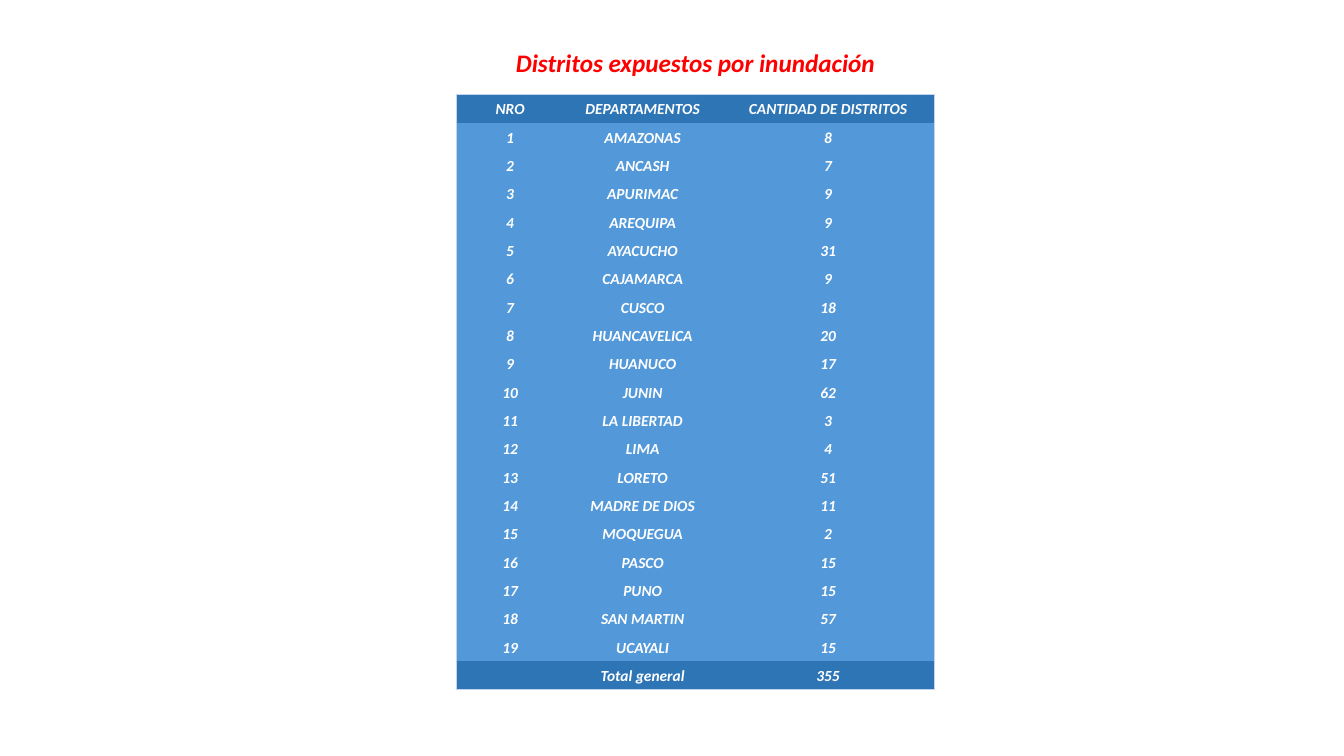
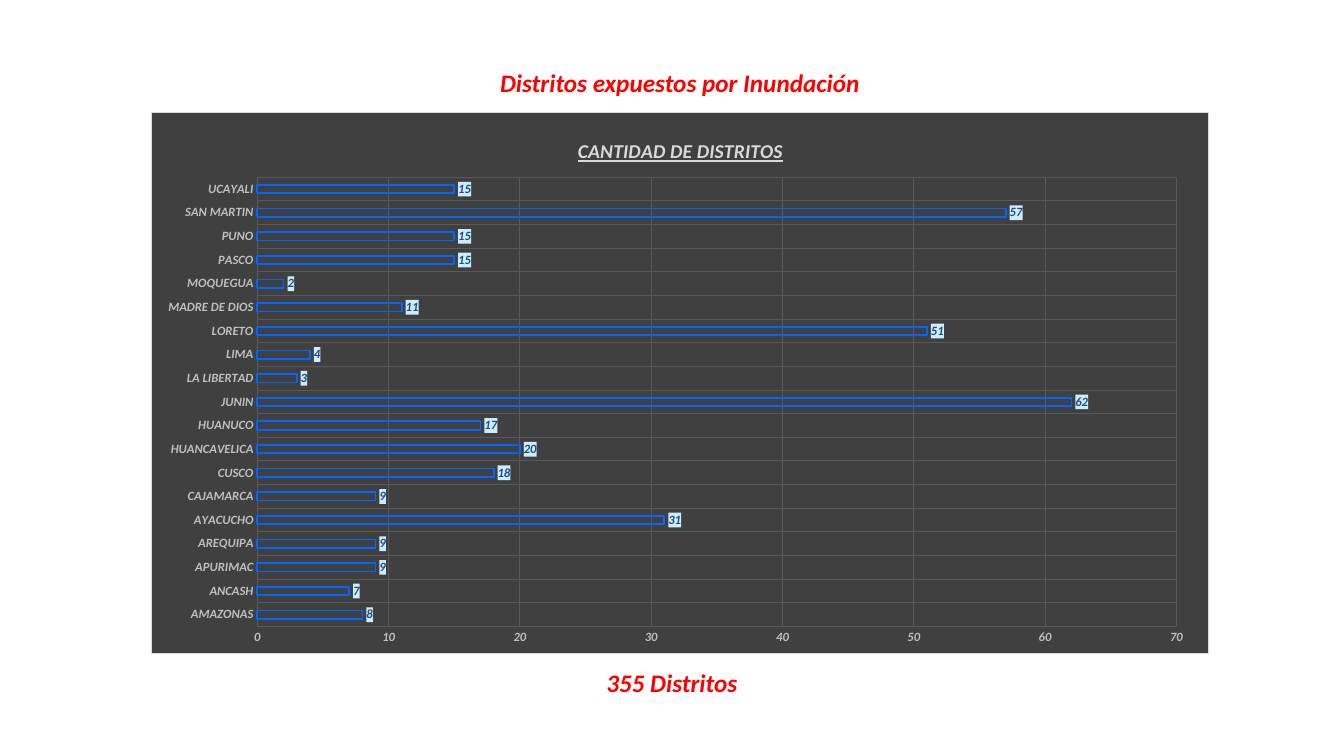
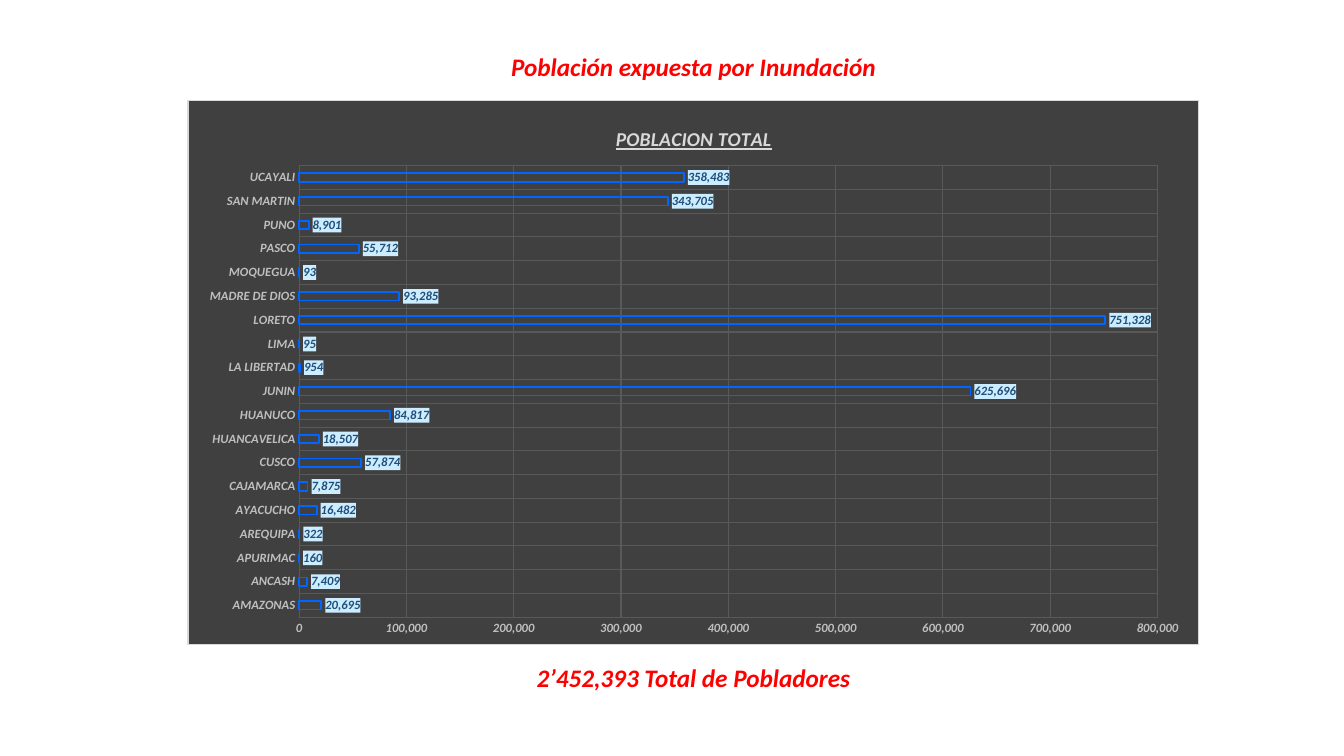
from pptx import Presentation, util as u
from pptx.chart.data import CategoryChartData
from pptx.dml.color import RGBColor
from pptx.enum import chart as charts, text
from pptx.oxml import parse_xml
from pptx.oxml.ns import nsdecls, qn

COLORS = {
    "heading": "FF0000", "white": "FFFFFF", "band": "2E75B6", "body": "5399DA",
    "edge": "C4D5EB", "panel": "404040", "panel_edge": "D9D9D9", "grid": "595959",
    "axis": "BFBFBF", "bar": "0066FF", "label": "1F4E79", "label_fill": "CCECFF",
}
FONT = {"name": "Calibri", "bold": True, "italic": True}
NO_STYLE = "{2D5ABB26-0587-4C30-8999-92F81FD0307C}"

deck = Presentation()
deck.slide_width, deck.slide_height = u.Inches(13.33), u.Inches(7.5)


def place(left, top, width, height):
    """Turn percent shares of the slide into lengths."""
    across, down = deck.slide_width / 100, deck.slide_height / 100
    return [int(left * across), int(top * down), int(width * across), int(height * down)]


def style(font, color, size, **extra):
    for name, value in {**FONT, "size": u.Pt(size), **extra}.items():
        setattr(font, name, value)
    font.color.rgb = RGBColor.from_string(COLORS[color])


# Data
departments = [
    "AMAZONAS", "ANCASH", "APURIMAC", "AREQUIPA", "AYACUCHO", "CAJAMARCA", "CUSCO",
    "HUANCAVELICA", "HUANUCO", "JUNIN", "LA LIBERTAD", "LIMA", "LORETO",
    "MADRE DE DIOS", "MOQUEGUA", "PASCO", "PUNO", "SAN MARTIN", "UCAYALI",
]
districts = [8, 7, 9, 9, 31, 9, 18, 20, 17, 62, 3, 4, 51, 11, 2, 15, 15, 57, 15]
population = [
    20695, 7409, 160, 322, 16482, 7875, 57874, 18507, 84817, 625696,
    954, 95, 751328, 93285, 93, 55712, 8901, 343705, 358483,
]

# Pages with their red headings and captions: text, left, top, width
headings = [
    [("Distritos expuestos por inundación", 37.5, 5.6, 28.5)],
    [("Distritos expuestos por Inundación", 36.3, 8.27, 28.58),
     ("355 Distritos", 44.33, 87.6, 11.33)],
    [("Población expuesta por Inundación", 37.13, 6.13, 28.95),
     ("2’452,393 Total de Pobladores", 39, 86.93, 25.2)],
]
pages = []
for lines in headings:
    page = deck.slides.add_slide(deck.slide_layouts[6])
    pages.append(page)
    for words, left, top, width in lines:
        box = page.shapes.add_textbox(*place(left, top, width, 5.33))
        box.text_frame.word_wrap = False
        box.text_frame.auto_size = text.MSO_AUTO_SIZE.SHAPE_TO_FIT_TEXT
        para = box.text_frame.paragraphs[0]
        para.alignment = text.PP_ALIGN.CENTER
        span = para.add_run()
        span.text = words
        style(span.font, "heading", 18)

# Table of districts
rows = [("NRO", "DEPARTAMENTOS", "CANTIDAD DE DISTRITOS")]
rows += [(str(number), name, str(count))
         for number, (name, count) in enumerate(zip(departments, districts), 1)]
rows += [("", "Total general", "355")]
last_row, last_column = len(rows) - 1, len(rows[0]) - 1

area = place(33.98, 12.53, 35.55, 78.8)
table = pages[0].shapes.add_table(len(rows), len(rows[0]), *area).table
table.first_row = table.horz_banding = False
table._tbl.tblPr.find(qn("a:tableStyleId")).text = NO_STYLE
for column, share in zip(table.columns, (7.95, 11.78, 15.82)):
    column.width = int(deck.slide_width * share / 100)
for row in table.rows:
    row.height = area[3] // len(rows)

cell_format = {
    "margin_left": u.Inches(0.01), "margin_right": u.Inches(0.01),
    "margin_top": u.Inches(0.01), "margin_bottom": 0,
    "vertical_anchor": text.MSO_ANCHOR.MIDDLE,
}
for r, values in enumerate(rows):
    for c, value in enumerate(values):
        cell = table.cell(r, c)
        for name, setting in cell_format.items():
            setattr(cell, name, setting)
        para = cell.text_frame.paragraphs[0]
        para.alignment = text.PP_ALIGN.CENTER
        if value:
            span = para.add_run()
            span.text = value
            style(span.font, "white", 11)
        else:
            para._p.get_or_add_endParaRPr().set("sz", "1100")
        # Thin line around the outside only
        outer = {"lnL": c == 0, "lnR": c == last_column, "lnT": r == 0, "lnB": r == last_row}
        for side in (name for name, shown in outer.items() if shown):
            cell._tc.get_or_add_tcPr().append(parse_xml(
                f'<a:{side} {nsdecls("a")} w="6350"><a:solidFill>'
                f'<a:srgbClr val="{COLORS["edge"]}"/></a:solidFill></a:{side}>'))
        cell.fill.solid()
        shade = "band" if r in (0, last_row) else "body"
        cell.fill.fore_color.rgb = RGBColor.from_string(COLORS[shade])

# Bar charts: page, place, title, values, axis top and step, title and plot layouts
bar_charts = [
    (pages[1], (11.25, 14.8, 78.68, 71.73), "CANTIDAD DE DISTRITOS", districts, 70, 10,
     {"x": 0.4, "y": 0.04}, {"x": 0.1, "y": 0.12, "w": 0.87, "h": 0.83}),
    (pages[2], (13.95, 13.2, 75.23, 72.13), "POBLACION TOTAL", population, 800000, 100000,
     {"x": 0.42, "y": 0.04}, {"x": 0.11, "y": 0.12, "w": 0.85, "h": 0.83}),
]
for page, area, title, values, top_value, step, title_layout, plot_layout in bar_charts:
    data = CategoryChartData(number_format="#,##0")
    data.categories = departments
    data.add_series("Series 1", values)
    chart = page.shapes.add_chart(
        charts.XL_CHART_TYPE.BAR_CLUSTERED, *place(*area), data).chart
    chart.has_legend = False
    style(chart.font, "axis", 9)

    # Title
    chart.has_title = True
    span = chart.chart_title.text_frame.paragraphs[0].add_run()
    span.text = title
    style(span.font, "panel_edge", 14, underline=True)

    # Axes
    for axis in (chart.category_axis, chart.value_axis):
        axis.major_tick_mark = axis.minor_tick_mark = charts.XL_TICK_MARK.NONE
        axis.has_major_gridlines = True
        grid_line = axis.major_gridlines.format.line
        grid_line.width = u.Pt(0.75)
        grid_line.color.rgb = RGBColor.from_string(COLORS["grid"])
        axis.format.line.fill.background()
        style(axis.tick_labels.font, "axis", 9)
    chart.value_axis.minimum_scale = 0
    chart.value_axis.maximum_scale = top_value
    chart.value_axis.major_unit = step

    # Outlined bars
    plot = chart.plots[0]
    plot.gap_width, plot.overlap, plot.vary_by_categories = 182, -50, False
    bars = plot.series[0]
    bars.format.fill.background()
    bars.format.line.width = u.Pt(1.25)
    bars.format.line.color.rgb = RGBColor.from_string(COLORS["bar"])

    # Value labels
    plot.has_data_labels = True
    labels = plot.data_labels
    labels.show_value = True
    labels.position = charts.XL_LABEL_POSITION.OUTSIDE_END
    labels.number_format, labels.number_format_is_linked = "#,##0", False
    style(labels.font, "label", 9)

    # Fills of the labels and of the whole panel
    space = chart._chartSpace
    panel_line = (f'<a:ln w="9525"><a:solidFill><a:srgbClr val="{COLORS["panel_edge"]}"/>'
                  '</a:solidFill></a:ln>')
    for before, shade, line in (
            (labels._element.find(qn("c:numFmt")), "label_fill", ""),
            (space.find(qn("c:chart")), "panel", panel_line)):
        before.addnext(parse_xml(
            f'<c:spPr {nsdecls("c", "a")}><a:solidFill><a:srgbClr val="{COLORS[shade]}"/>'
            f'</a:solidFill>{line}</c:spPr>'))

    # Places of the title and the plot
    plot_area = space.find(qn("c:chart")).find(qn("c:plotArea"))
    for part, index, layout in ((chart.chart_title._element, 1, title_layout),
                                (plot_area, 0, plot_layout)):
        for old in part.findall(qn("c:layout")):
            part.remove(old)
        target = '<c:layoutTarget val="inner"/>' if "w" in layout else ""
        modes = "".join(f'<c:{key}Mode val="edge"/>' for key in "xy")
        sizes = "".join(f'<c:{key} val="{share}"/>' for key, share in layout.items())
        part.insert(index, parse_xml(
            f'<c:layout {nsdecls("c")}><c:manualLayout>{target}{modes}{sizes}'
            '</c:manualLayout></c:layout>'))

deck.save("out.pptx")
